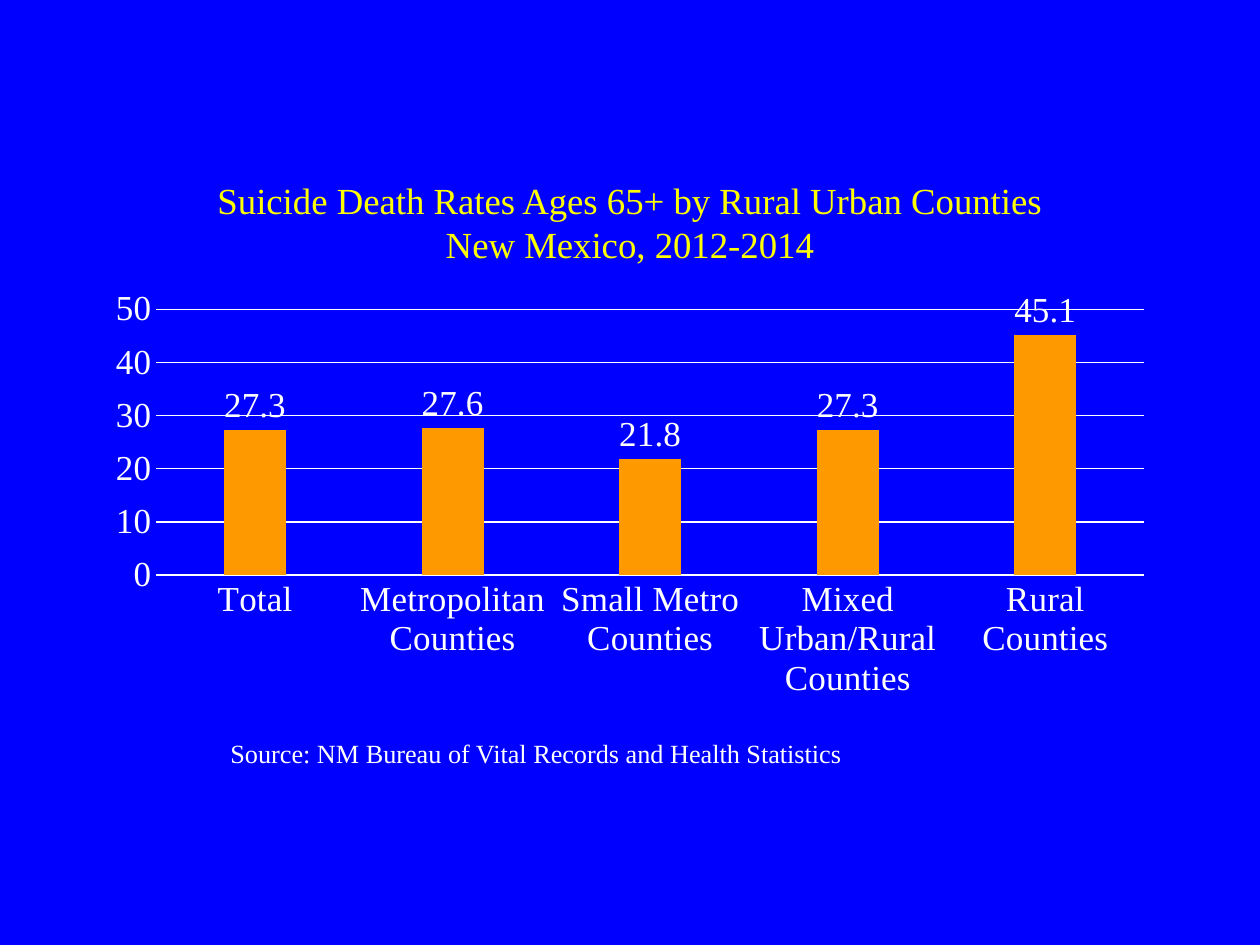
from pptx import Presentation
from pptx.chart.data import CategoryChartData
from pptx.dml.color import RGBColor
from pptx.enum.chart import XL_CHART_TYPE as ChartType
from pptx.enum.chart import XL_LABEL_POSITION as LabelPosition
from pptx.enum.chart import XL_TICK_MARK as TickMark
from pptx.enum.text import MSO_ANCHOR as Anchor
from pptx.enum.text import PP_ALIGN as Align
from pptx.util import Inches, Pt

FONT = "Times New Roman"
COLORS = {
    "background": "0000FF",
    "title": "FFFF00",
    "text": "FFFFFF",
    "bar": "FF9900",
}
RATES = {
    "Total": 27.3,
    "Metropolitan Counties": 27.6,
    "Small Metro Counties": 21.8,
    "Mixed Urban/Rural Counties": 27.3,
    "Rural Counties": 45.1,
}


def color(name):
    return RGBColor.from_string(COLORS[name])


def set_values(target, values):
    for name, value in values.items():
        setattr(target, name, value)


def style_font(font, size, color_name="text"):
    set_values(font, {"name": FONT, "size": Pt(size), "bold": False})
    font.color.rgb = color(color_name)


def style_line(line):
    line.color.rgb = color("text")
    line.width = Pt(0.75)


def add_text(slide, text, box, size, color_name="text",
             align=Align.LEFT, anchor=Anchor.TOP):
    shape = slide.shapes.add_textbox(*map(Inches, box))
    frame = shape.text_frame
    set_values(frame, {"word_wrap": True, "vertical_anchor": anchor})
    paragraph = frame.paragraphs[0]
    paragraph.text = text
    paragraph.alignment = align
    for run in paragraph.runs:
        style_font(run.font, size, color_name)


def style_axes(chart):
    for axis in (chart.category_axis, chart.value_axis):
        set_values(axis, {"major_tick_mark": TickMark.NONE,
                          "minor_tick_mark": TickMark.NONE})
        style_font(axis.tick_labels.font, 20)
    style_line(chart.category_axis.format.line)

    value_axis = chart.value_axis
    set_values(value_axis, {"minimum_scale": 0, "maximum_scale": 50,
                            "major_unit": 10, "has_major_gridlines": True})
    value_axis.format.line.fill.background()
    style_line(value_axis.major_gridlines.format.line)


def add_rate_chart(slide, box):
    data = CategoryChartData()
    data.categories = list(RATES)
    data.add_series("Series 1", list(RATES.values()))
    chart = slide.shapes.add_chart(
        ChartType.COLUMN_CLUSTERED, *map(Inches, box), data).chart
    set_values(chart, {"has_title": False, "has_legend": False})
    style_font(chart.font, 10)
    style_axes(chart)

    # Bars and their value labels
    plot = chart.plots[0]
    set_values(plot, {"gap_width": 219, "overlap": -27,
                      "vary_by_categories": False, "has_data_labels": True})
    set_values(plot.data_labels, {"show_value": True,
                                  "position": LabelPosition.OUTSIDE_END})
    style_font(plot.data_labels.font, 20)
    fill = plot.series[0].format.fill
    fill.solid()
    fill.fore_color.rgb = color("bar")


def main():
    presentation = Presentation()
    set_values(presentation, {"slide_width": Inches(10),
                              "slide_height": Inches(7.5)})
    slide = presentation.slides.add_slide(presentation.slide_layouts[6])

    # Background
    fill = slide.background.fill
    fill.solid()
    fill.fore_color.rgb = color("background")

    # Title, source line and chart
    add_text(slide,
             "Suicide Death Rates Ages 65+ by Rural Urban Counties\v"
             "New Mexico, 2012-2014",
             (0.75, 1.29, 8.5, 0.94), 21, "title", Align.CENTER, Anchor.MIDDLE)
    add_text(slide, "Source: NM Bureau of Vital Records and Health Statistics",
             (1.73, 5.8, 6.25, 0.35), 15)
    add_rate_chart(slide, (0.75, 2.23, 8.5, 3.38))

    presentation.save("out.pptx")


if __name__ == "__main__":
    main()
